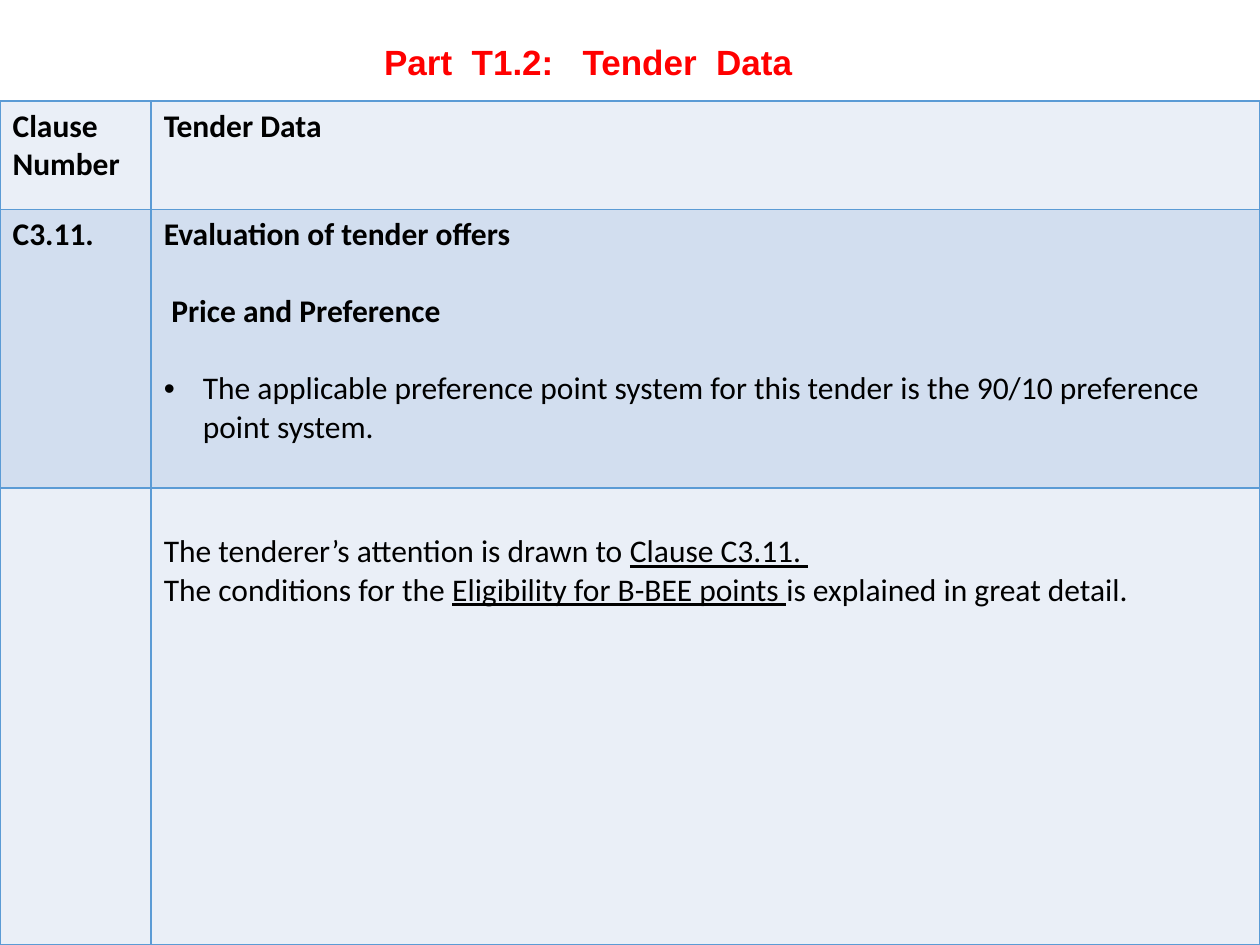
import pptx
import pptx.dml.color
import pptx.enum.text
import pptx.oxml
import pptx.oxml.ns
import pptx.util

COLORS = {
    "title": "FF0000",
    "text": "000000",
    "border": "5B9BD5",
    "light": "EAEFF7",
    "dark": "D2DEEF",
}
WIDTH, HEIGHT = pptx.util.Inches(10), pptx.util.Inches(7.5)
TEXT_SIZE = 18
BLANK_LINE = 22  # points, one line of body text

# Each paragraph is (runs, options); each run is (text, style letters)
HEADER = [
    [([("Clause", "b")], {}), ([("Number", "b")], {})],
    [([("Tender Data", "b")], {})],
]
EVALUATION = [
    [([("C3.11.", "b")], {})],
    [
        ([("Evaluation of tender offers", "b")], {}),
        ([("Price and Preference", "b")], {"before": BLANK_LINE, "indent": 0.06}),
        ([("The applicable preference point system for this tender is the "
           "90/10 preference point system.", "")],
         {"before": BLANK_LINE, "bullet": True, "indent": 0.31}),
    ],
]
ATTENTION = [
    [],
    [
        ([("The tenderer’s attention is drawn to ", ""), ("Clause C3.11. ", "u")], {}),
        ([("The conditions for the ", ""), ("Eligibility for B-BEE points ", "u"),
          ("is explained in great detail.", "")], {}),
    ],
]
# Content, share of slide height, fill, blank lines above the text
ROWS = [
    (HEADER, 0.115, "light", 0),
    (EVALUATION, 0.295, "dark", 0),
    (ATTENTION, 0.483, "light", 1),
]
COLUMNS = [0.12, 0.88]  # shares of table width


def rgb(name):
    return pptx.dml.color.RGBColor.from_string(COLORS[name])


def add_run(paragraph, text, font_name, size, color, style):
    run = paragraph.add_run()
    run.text = text
    run.font.name = font_name
    run.font.size = pptx.util.Pt(size)
    run.font.color.rgb = rgb(color)
    run.font.bold = "b" in style
    run.font.underline = "u" in style


def set_indent(paragraph, indent, bullet):
    properties = paragraph._p.get_or_add_pPr()
    margin = pptx.util.Inches(indent)
    properties.set("marL", str(margin))
    properties.set("indent", str(-margin if bullet else 0))
    if bullet:
        namespace = pptx.oxml.ns.nsdecls("a")
        for tag in ('buFont {} typeface="Arial"', 'buChar {} char="•"'):
            properties.append(pptx.oxml.parse_xml(f"<a:{tag.format(namespace)}/>"))


def set_borders(cell):
    properties = cell._tc.get_or_add_tcPr()
    for index, side in enumerate("LRTB"):
        properties.insert(index, pptx.oxml.parse_xml(
            f'<a:ln{side} {pptx.oxml.ns.nsdecls("a")} w="{pptx.util.Pt(1)}">'
            f'<a:solidFill><a:srgbClr val="{COLORS["border"]}"/></a:solidFill>'
            f"</a:ln{side}>"))


def fill_cell(cell, paragraphs, fill, blank_lines):
    cell.fill.solid()
    cell.fill.fore_color.rgb = rgb(fill)
    set_borders(cell)
    cell.margin_top = pptx.util.Inches(0.05) + pptx.util.Pt(BLANK_LINE * blank_lines)
    for index, (runs, options) in enumerate(paragraphs):
        frame = cell.text_frame
        paragraph = frame.add_paragraph() if index else frame.paragraphs[0]
        if "indent" in options:
            set_indent(paragraph, options["indent"], options.get("bullet", False))
        if "before" in options:
            paragraph.space_before = pptx.util.Pt(options["before"])
        for text, style in runs:
            add_run(paragraph, text, "Calibri", TEXT_SIZE, "text", style)


def add_title(slide, left, top, width, height):
    title = slide.shapes.title
    title.left, title.top, title.width, title.height = left, top, width, height
    frame = title.text_frame
    frame.word_wrap = False
    frame.auto_size = pptx.enum.text.MSO_AUTO_SIZE.NONE
    frame.vertical_anchor = pptx.enum.text.MSO_ANCHOR.MIDDLE
    paragraph = frame.paragraphs[0]
    paragraph.alignment = pptx.enum.text.PP_ALIGN.CENTER
    add_run(paragraph, "Part  T1.2:   Tender  Data", "Arial", 20, "title", "b")


def add_tender_table(slide, left, top, width, height):
    table = slide.shapes.add_table(
        len(ROWS), len(COLUMNS), left, top, width, height).table
    table.first_row = False
    table.horz_banding = False
    for column, share in zip(table.columns, COLUMNS):
        column.width = int(width * share)
    for row, (contents, share, fill, blank_lines) in zip(table.rows, ROWS):
        row.height = int(HEIGHT * share)
        for cell, paragraphs in zip(row.cells, contents):
            fill_cell(cell, paragraphs, fill, blank_lines)


def main():
    presentation = pptx.Presentation()
    presentation.slide_width, presentation.slide_height = WIDTH, HEIGHT
    slide = presentation.slides.add_slide(presentation.slide_layouts[5])
    table_top = pptx.util.Inches(0.8)

    # Title above the table
    add_title(slide, int(WIDTH * 0.29), int(HEIGHT * 0.036),
              int(WIDTH * 0.354), int(HEIGHT * 0.058))
    # Clauses, filling the rest of the slide
    add_tender_table(slide, 0, table_top, WIDTH, HEIGHT - table_top)
    presentation.save("out.pptx")


if __name__ == "__main__":
    main()
